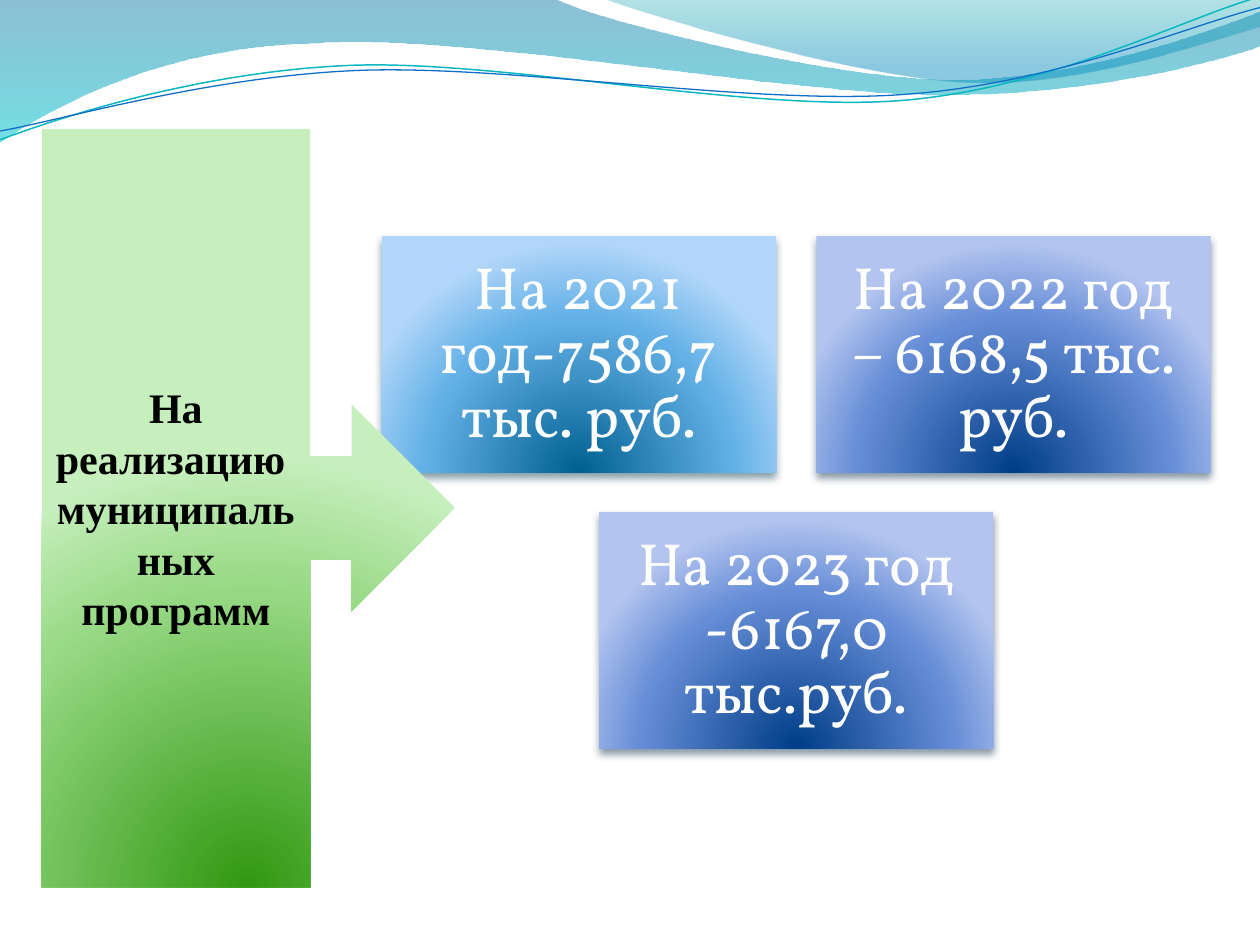
from lxml.etree import SubElement
from pptx import Presentation
from pptx.dml.color import RGBColor
from pptx.enum.shapes import MSO_SHAPE
from pptx.enum.text import MSO_ANCHOR, PP_ALIGN
from pptx.oxml import parse_xml
from pptx.oxml.ns import nsdecls, qn
from pptx.util import Inches, Pt

COLORS = {"white": "FFFFFF", "black": "000000", "teal": "0AB8BF", "blue": "0F6FC6"}
LINEAR = '<a:lin ang="5400000" scaled="1"/>'
RADIAL = ('<a:path path="circle"><a:fillToRect l="50000" t="130000" '
          'r="50000" b="-30000"/></a:path>')

SKY = {"stops": [(0, "006091"), (68, "64B1E7"), (100, "B1D6F9")], "shade": "00374C"}
NAVY = {"stops": [(0, "003D87"), (68, "668DD7"), (100, "B3C4EF")], "shade": "042747"}
GREEN = {"stops": [(0, "319811"), (68, "95D882"), (100, "C6EFBD")]}

YEARS = [
    ("На 2021 год-7586,7 тыс. руб.", SKY),
    ("На 2022 год – 6168,5 тыс. руб.", NAVY),
    ("На 2023 год -6167,0 тыс.руб.", NAVY),
]
TITLE = "На реализацию  муниципальных программ"

BANDS = [
    ([(0, 0), (4.4, -0.01),
      (4.76, 0.17, 6.64, 0.63, 7.58, 0.63), (8.53, 0.63, 9.58, 0.26, 10, 0.09),
      (10.01, 0.36),
      (9.83, 0.44, 8.7, 0.76, 7.46, 0.75), (6.22, 0.75, 3.82, 0.28, 2.57, 0.34),
      (1.29, 0.36, 0.46, 0.83, -0.01, 1.13)],
     [(0, "0074A1", 45), (100, "00C6CF", 55)]),
    ([(4.79, -0.01),
      (5.09, 0.11, 6.82, 0.62, 7.69, 0.65), (8.56, 0.69, 9.61, 0.32, 10, 0.21),
      (10, 0)],
     [(0, "00A1A9", 30), (80, "008BBF", 45)]),
]
WAVES = [
    ([(0, 1.11), (0.48, 0.93, 1.58, 0.57, 2.77, 0.52),
      (3.95, 0.47, 5.93, 0.89, 7.13, 0.8), (8.33, 0.71, 9.38, 0.15, 9.98, -0.02)],
     "teal", 0.85),
    ([(0, 1.04), (0.47, 0.96, 1.64, 0.61, 2.83, 0.56),
      (4.03, 0.51, 5.97, 0.84, 7.17, 0.75), (8.36, 0.67, 9.41, 0.21, 10, 0.06)],
     "blue", 0.75),
]
LEFT, TOP, WIDTH, HEIGHT = 3.03, 1.87, 3.13, 1.88
PITCH, DROP, COLS = 3.45, 2.19, 2


def curve(shapes, path, close):
    first, *rest = [tuple(Inches(n) for n in part[-2:]) for part in path]
    pen = shapes.build_freeform(*first, scale=1.0)
    pen.add_line_segments(rest, close=close)
    shape = pen.convert_to_shape()
    shape.shadow.inherit = False
    sides = list(shape.element.spPr.iter(qn("a:lnTo")))
    for side, part in zip(sides, path[1:]):
        if len(part) == 2:
            continue
        side.tag = qn("a:cubicBezTo")
        for i in (0, 2):
            point = parse_xml(f'<a:pt {nsdecls("a")} x="{Inches(part[i]) - shape.left}" '
                              f'y="{Inches(part[i + 1]) - shape.top}"/>')
            side.insert(i // 2, point)
    return shape


def shade(shape, stops, kind):
    marks = "".join(
        f'<a:gs pos="{pos * 1000}"><a:srgbClr val="{color}">'
        + "".join(f'<a:alpha val="{a * 1000}"/>' for a in alpha)
        + "</a:srgbClr></a:gs>"
        for pos, color, *alpha in stops)
    fill = parse_xml(f'<a:gradFill {nsdecls("a")} rotWithShape="1">'
                     f"<a:gsLst>{marks}</a:gsLst>{kind}</a:gradFill>")
    shape.fill.background()
    props = shape.element.spPr
    props.replace(props.find(qn("a:noFill")), fill)
    shape.line.fill.background()


def panel(shapes, kind, box, look):
    shape = shapes.add_shape(kind, *map(Inches, box))
    shade(shape, look["stops"], RADIAL)
    shape.shadow.inherit = False
    if "shade" in look:
        effects = shape.element.spPr.find(qn("a:effectLst"))
        drop = SubElement(effects, qn("a:outerShdw"), blurRad=str(Pt(4.5)),
                          dist=str(Pt(3)), dir="5400000", rotWithShape="0")
        tint = SubElement(drop, qn("a:srgbClr"), val=look["shade"])
        SubElement(tint, qn("a:alpha"), val="48000")
    return shape


def write(shape, text, *, font, size, color, bold=False, inset=None, spacing=None):
    frame = shape.text_frame
    frame.word_wrap = True
    frame.vertical_anchor = MSO_ANCHOR.MIDDLE
    if inset is not None:
        frame.margin_left = frame.margin_right = Inches(inset)
        frame.margin_top = frame.margin_bottom = Inches(inset)
    para = frame.paragraphs[0]
    para.alignment = PP_ALIGN.CENTER
    if spacing:
        para.line_spacing = spacing
    run = para.add_run()
    run.text = text
    run.font.name = font
    run.font.size = Pt(size)
    run.font.bold = bold
    run.font.color.rgb = RGBColor.from_string(COLORS[color])


def main():
    deck = Presentation()
    deck.slide_width, deck.slide_height = Inches(10), Inches(7.5)
    shapes = deck.slides.add_slide(deck.slide_layouts[6]).shapes

    for path, stops in BANDS:
        shade(curve(shapes, path, True), stops, LINEAR)
    for path, color, width in WAVES:
        wave = curve(shapes, path, False)
        wave.fill.background()
        wave.line.color.rgb = RGBColor.from_string(COLORS[color])
        wave.line.width = Pt(width)

    for i, (text, look) in enumerate(YEARS):
        row, col = divmod(i, COLS)
        count = min(COLS, len(YEARS) - row * COLS)
        shift = (COLS - count) / 2
        x = LEFT + (col + shift) * PITCH
        y = TOP + row * DROP
        card = panel(shapes, MSO_SHAPE.RECTANGLE, (x, y, WIDTH, HEIGHT), look)
        write(card, text, font="Vollkorn", size=34, color="white",
              inset=0.14, spacing=0.9)

    label = panel(shapes, MSO_SHAPE.RIGHT_ARROW_CALLOUT, (0.33, 1.02, 3.28, 6.02), GREEN)
    write(label, TITLE, font="Times New Roman", size=24, color="black", bold=True)

    deck.save("out.pptx")


if __name__ == "__main__":
    main()
